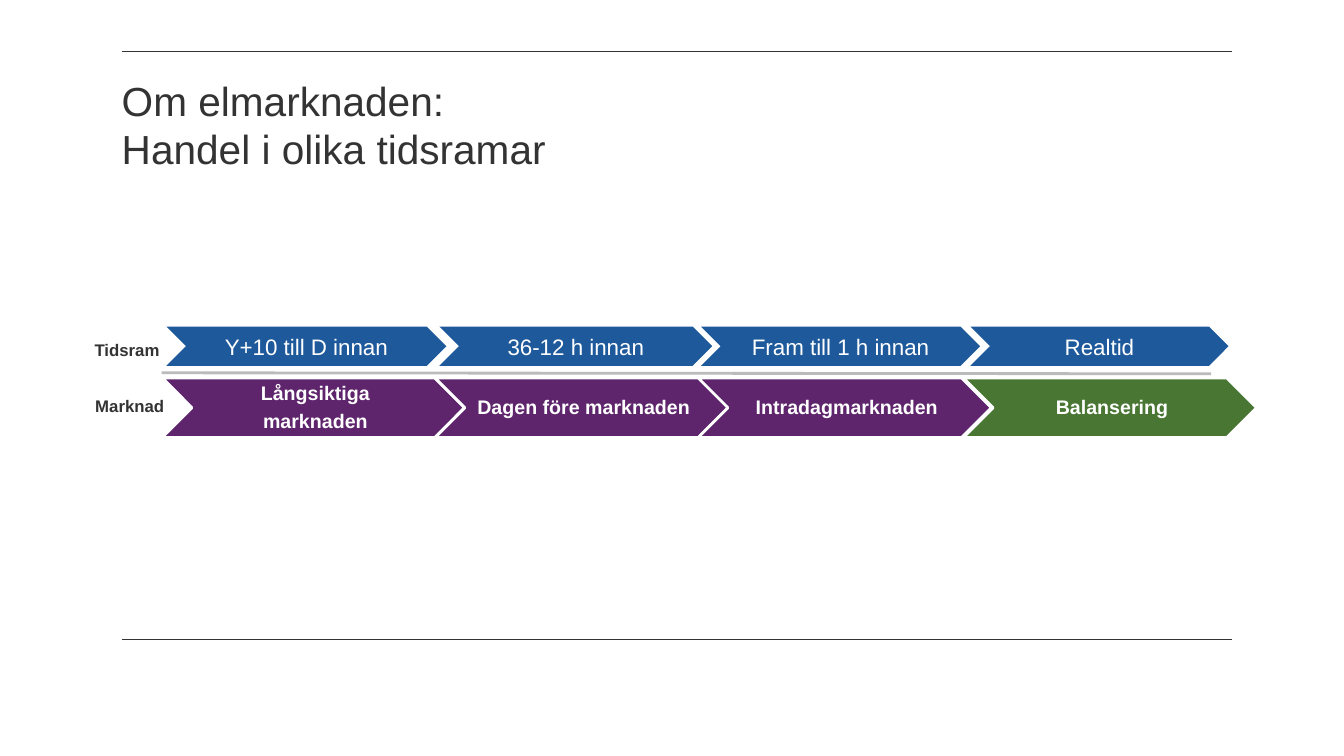
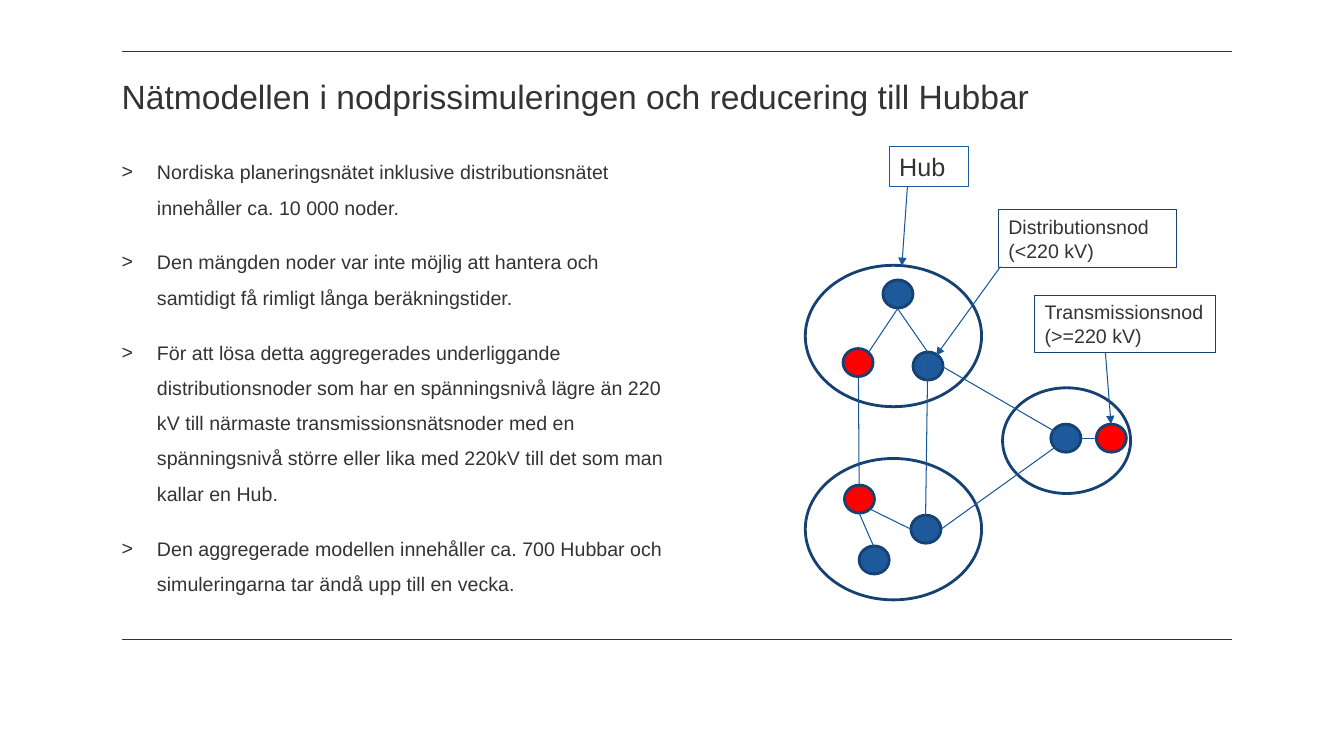
import pptx
import pptx.util
import pptx.dml.color
import pptx.enum.shapes
import pptx.enum.text
import pptx.oxml
import pptx.oxml.ns

Pt = pptx.util.Pt
SHAPE = pptx.enum.shapes.MSO_SHAPE
ALIGN = pptx.enum.text.PP_ALIGN
ANCHOR = pptx.enum.text.MSO_ANCHOR
DRAWING = pptx.oxml.ns.nsdecls("a")

# Shared colours and formats
INK, WHITE, GREY = "333333", "FFFFFF", "BBBBBB"
BLUE, NAVY, LINK = "1D599B", "154273", "19579B"
PURPLE, GREEN, RED = "5E256C", "497633", "FF0000"
NO_MARGINS = dict.fromkeys(
    ("margin_left", "margin_top", "margin_right", "margin_bottom"), 0)
TOP = {"word_wrap": True, "vertical_anchor": ANCHOR.TOP,
       "auto_size": pptx.enum.text.MSO_AUTO_SIZE.NONE}
MIDDLE = {**TOP, "vertical_anchor": ANCHOR.MIDDLE}
LEFT = {"alignment": ALIGN.LEFT, "space_before": Pt(0)}
CENTER = {"alignment": ALIGN.CENTER}


def color(target, value):
    """Give a font, fill or line a solid colour from a hex string."""
    if hasattr(target, "solid"):
        target.solid()
        target = target.fore_color
    else:
        target = target.color
    target.rgb = pptx.dml.color.RGBColor.from_string(value)


def write(box, lines, size, ink, frame_format, para_format, bold=False, bullet=None):
    """Fill a box with one paragraph per line and format it."""
    frame = box.text_frame
    for name, value in frame_format.items():
        setattr(frame, name, value)
    for index, text in enumerate(lines):
        para = frame.paragraphs[0] if index == 0 else frame.add_paragraph()
        para.text = text
        for name, value in para_format.items():
            setattr(para, name, value)
        if bullet:
            properties = para._p.get_or_add_pPr()
            properties.set("marL", str(Pt(25.2)))
            properties.set("indent", str(-Pt(25.2)))
            properties.append(pptx.oxml.parse_xml(f'<a:buChar {DRAWING} char="{bullet}"/>'))
        for span in para.runs:
            for name, value in {"name": "Arial", "size": Pt(size), "bold": bold}.items():
                setattr(span.font, name, value)
            color(span.font, ink)


# Deck, with the title place on the master
deck = pptx.Presentation()
deck.slide_width, deck.slide_height = Pt(960.5), Pt(540)
master_title = deck.slide_master.placeholders[0]
for name, value in {"left": 87, "top": 54, "width": 793.5, "height": 85}.items():
    setattr(master_title, name, Pt(value))
trade = deck.slides.add_slide(deck.slide_layouts.get_by_name("Title Only"))
network = deck.slides.add_slide(deck.slide_layouts.get_by_name("Title and Content"))

for page, text, size in (
    (trade, "Om elmarknaden: \vHandel i olika tidsramar", 29),
    (network, "Nätmodellen i nodprissimuleringen och reducering till Hubbar", 24),
):
    write(page.shapes.title, [text], size, INK, {**TOP, **NO_MARGINS}, LEFT)

# Trade: market and time frame chevrons as (left, width, fill, lines)
market_row = (
    (116, 216, PURPLE, ["Långsiktiga", "marknaden"]),
    (311, 209.5, PURPLE, ["Dagen före marknaden"]),
    (499, 209.5, PURPLE, ["Intradagmarknaden"]),
    (688.5, 209.5, GREEN, ["Balansering"]),
)
time_row = (
    (119, 200, BLUE, ["Y+10 till D innan"]),
    (314, 195, BLUE, ["36-12 h innan"]),
    (501, 199.5, BLUE, ["Fram till 1 h innan"]),
    (693.5, 184.5, BLUE, ["Realtid"]),
)
market_frame = {**MIDDLE, "margin_left": Pt(4.3), "margin_top": Pt(1.4),
                "margin_right": Pt(1.4), "margin_bottom": Pt(1.4)}
market_para = {**CENTER, "line_spacing": 0.9, "space_after": Pt(5)}
for row, top, height, size, bold, frame_format, para_format in (
    (market_row, 270, 42.5, 14, True, market_frame, market_para),
    (time_row, 233.3, 28, 16, False, MIDDLE, CENTER),
):
    for left, width, fill, lines in row:
        box = trade.shapes.add_shape(SHAPE.CHEVRON, Pt(left), Pt(top), Pt(width), Pt(height))
        box.shadow.inherit = False
        color(box.fill, fill)
        if row is market_row:
            color(box.line, WHITE)
            box.line.width = Pt(2)
        else:
            box.line.fill.background()
        write(box, lines, size, WHITE, frame_format, para_format, bold)

# Trade: row labels
for text, left, top, width in (("Tidsram", 60.5, 239, 70.5), ("Marknad", 61, 279, 80.5)):
    box = trade.shapes.add_textbox(Pt(left), Pt(top), Pt(width), Pt(21.5))
    write(box, [text], 12, INK, TOP, LEFT, True)

# Network: list
body = network.placeholders[1]
for name, value in {"left": 87, "top": 106, "width": 387.5, "height": 335}.items():
    setattr(body, name, Pt(value))
write(body, [
    "Nordiska planeringsnätet inklusive distributionsnätet innehåller ca. 10 000 noder.",
    "Den mängden noder var inte möjlig att hantera och samtidigt få rimligt långa "
    "beräkningstider.",
    "För att lösa detta aggregerades underliggande distributionsnoder som har en "
    "spänningsnivå lägre än 220 kV till närmaste transmissionsnätsnoder med en "
    "spänningsnivå större eller lika med 220kV till det som man kallar en Hub.",
    "Den aggregerade modellen innehåller ca. 700 Hubbar och simuleringarna tar ändå "
    "upp till en vecka.",
], 14, INK, {**TOP, **NO_MARGINS},
    {**LEFT, "line_spacing": 1.5, "space_after": Pt(14)}, bullet=">")

# Network: nodes and the hubs around them
NODE = (21.5, 20)
HUB = (126, 101)
for left, top, (width, height), fill in (
    (614, 390, NODE, BLUE),
    (603.5, 346.5, NODE, RED),
    (651, 368, NODE, BLUE),
    (652.5, 251.5, NODE, BLUE),
    (602.5, 249, NODE, RED),
    (631, 200, NODE, BLUE),
    (751, 303, NODE, BLUE),
    (783.5, 303, NODE, RED),
    (575.5, 189.5, HUB, None),
    (575.5, 327.5, HUB, None),
    (716.5, 277, (91.5, 75.5), None),
):
    circle = network.shapes.add_shape(
        SHAPE.FLOWCHART_CONNECTOR, Pt(left), Pt(top), Pt(width), Pt(height))
    circle.shadow.inherit = False
    color(circle.line, NAVY)
    circle.line.width = Pt(2)
    if fill:
        color(circle.fill, fill)
    else:
        circle.fill.background()

# Network: callouts
for text, left, top, width, height, size, border in (
    ("Hub", 635.5, 104.5, 57, 29, 18, BLUE),
    ("Distributionsnod (<220 kV)", 713.5, 150, 127, 41, 14, NAVY),
    ("Transmissionsnod (>=220 kV)", 739.5, 211, 129, 41, 14, NAVY),
):
    box = network.shapes.add_shape(SHAPE.RECTANGLE, Pt(left), Pt(top), Pt(width), Pt(height))
    box.shadow.inherit = False
    box.fill.background()
    color(box.line, border)
    box.line.width = Pt(0.75)
    write(box, [text], size, INK, TOP, LEFT)

# All lines: frame rules for the master, row divider, node links, callout arrows
frame_rules = [(87, y, 880.5, y) for y in (36.8, 456.6)]
node_links = [
    (613.5, 269.5, 614, 346.5),
    (673, 261.5, 760.5, 312),
    (663, 259, 661.5, 368),
    (672.5, 378, 754, 319.5),
    (620.5, 252, 641.5, 220.5),
    (641.5, 220.5, 663, 251.5),
    (621.5, 363.5, 651, 378),
    (614, 366.5, 624.5, 390.5),
    (772.5, 313, 783.5, 313),
]
callout_arrows = [
    (648.5, 133.5, 644.5, 190),
    (715, 190.5, 669, 254),
    (790, 252, 794, 303),
]
for page, lines, ink, width in (
    (trade, frame_rules, INK, 0.5),
    (trade, [(115.5, 266.3, 865.5, 267)], GREY, 2),
    (network, node_links, LINK, 0.75),
    (network, callout_arrows, LINK, 0.75),
):
    for index, ends in enumerate(lines):
        line = page.shapes.add_connector(
            pptx.enum.shapes.MSO_CONNECTOR.STRAIGHT, *(Pt(end) for end in ends))
        color(line.line, ink)
        line.line.width = Pt(width)
        line.element.spPr.append(pptx.oxml.parse_xml(f"<a:effectLst {DRAWING}/>"))
        if lines is callout_arrows:
            line.line._get_or_add_ln().append(
                pptx.oxml.parse_xml(f'<a:tailEnd {DRAWING} type="triangle"/>'))
        if lines is frame_rules:
            line.element.nvCxnSpPr.cNvPr.set("id", str(100 + index))
            deck.slide_master.shapes.element.append(line.element)

deck.save("out.pptx")
